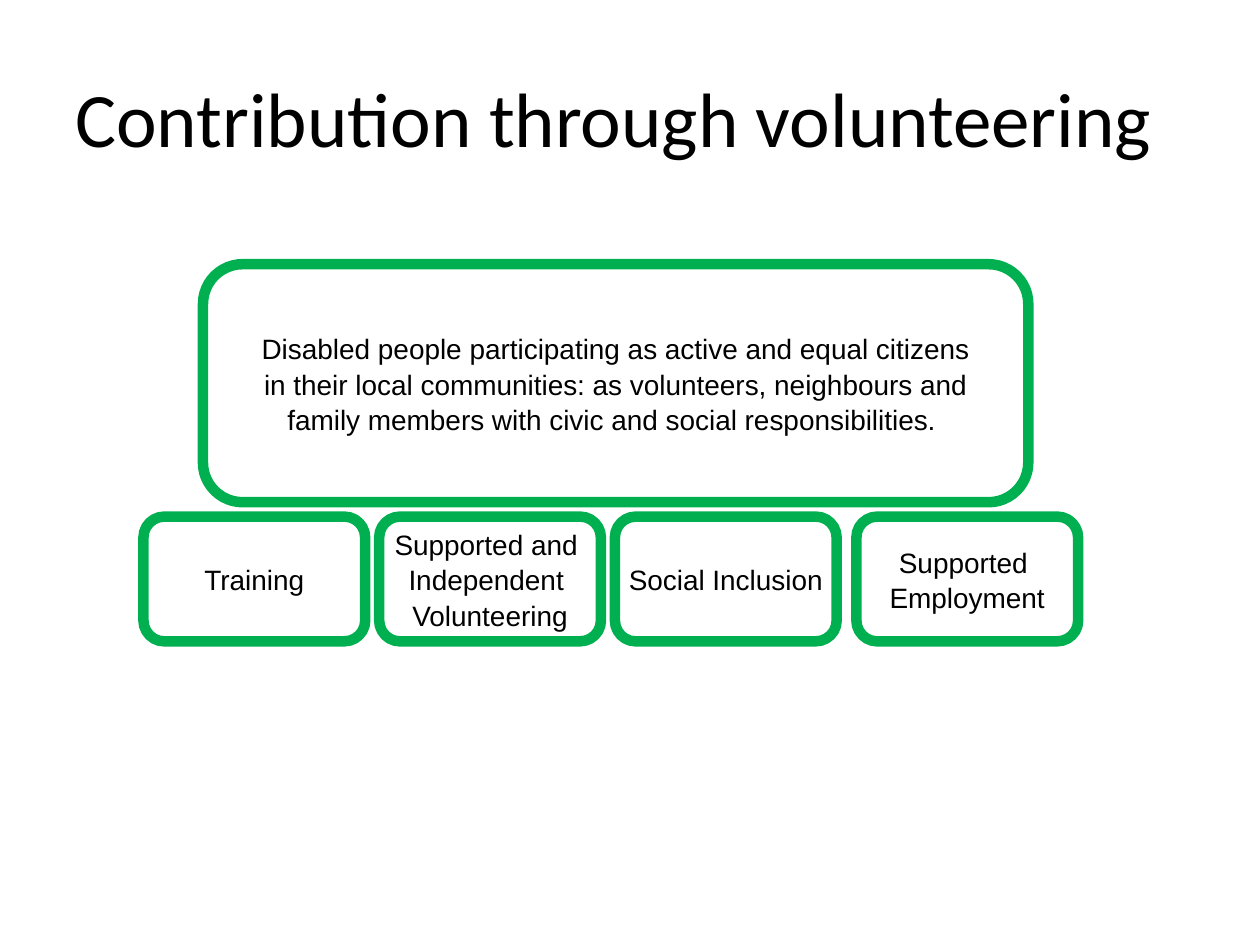
import pptx
import pptx.dml.color
import pptx.enum.shapes
import pptx.enum.text
import pptx.util
from dataclasses import dataclass

Pt = pptx.util.Pt
GREEN = pptx.dml.color.RGBColor(0x00, 0xB0, 0x50)
BLACK = pptx.dml.color.RGBColor(0x00, 0x00, 0x00)
MIDDLE = pptx.enum.text.MSO_ANCHOR.MIDDLE
ROUND = pptx.enum.shapes.MSO_SHAPE.ROUNDED_RECTANGLE

# Row of four boxes
TOP, WIDE, HIGH = 295.2, 126.7, 71.3


@dataclass
class Box:
    left: float
    top: float
    width: float
    height: float
    lines: list[str]


def style(para: pptx.text.text._Paragraph, face: str, size: float) -> None:
    para.font.name = face
    para.font.size = Pt(size)
    para.font.color.rgb = BLACK


def draw_box(slide: pptx.slide.Slide, box: Box) -> None:
    shape = slide.shapes.add_shape(
        ROUND, Pt(box.left), Pt(box.top), Pt(box.width), Pt(box.height))
    shape.shadow.inherit = False
    shape.fill.background()
    shape.line.color.rgb = GREEN
    shape.line.width = Pt(6)
    frame = shape.text_frame
    frame.word_wrap = False
    frame.vertical_anchor = MIDDLE
    frame.margin_left = frame.margin_right = Pt(1)
    frame.margin_top = frame.margin_bottom = Pt(1)
    frame.text = "\n".join(box.lines)
    for para in frame.paragraphs:
        para.alignment = pptx.enum.text.PP_ALIGN.CENTER
        para.line_spacing = 1.05
        style(para, "Arial", 16)


def draw_title(slide: pptx.slide.Slide, text: str) -> None:
    frame = slide.shapes.add_textbox(
        Pt(36), Pt(21.6), Pt(648), Pt(90)).text_frame
    frame.word_wrap = True
    frame.vertical_anchor = MIDDLE
    frame.text = text
    style(frame.paragraphs[0], "Calibri", 44)


def main() -> None:
    deck = pptx.Presentation()
    deck.slide_width, deck.slide_height = Pt(720), Pt(540)
    slide = deck.slides.add_slide(deck.slide_layouts[6])

    draw_title(slide, "Contribution through volunteering")

    # Main aim
    draw_box(slide, Box(116, 151, 471.6, 136, [
        "Disabled people participating as active and equal citizens",
        "in their local communities: as volunteers, neighbours and",
        "family members with civic and social responsibilities. "]))

    # Strands of work; the last stands a little apart
    strands = [
        (82, ["Training"]),
        (216.7, ["Supported and ", "Independent ", "Volunteering"]),
        (351.4, ["Social Inclusion"]),
        (489.4, ["Supported ", "Employment"]),
    ]
    for left, lines in strands:
        draw_box(slide, Box(left, TOP, WIDE, HIGH, lines))

    deck.save("out.pptx")


if __name__ == "__main__":
    main()
